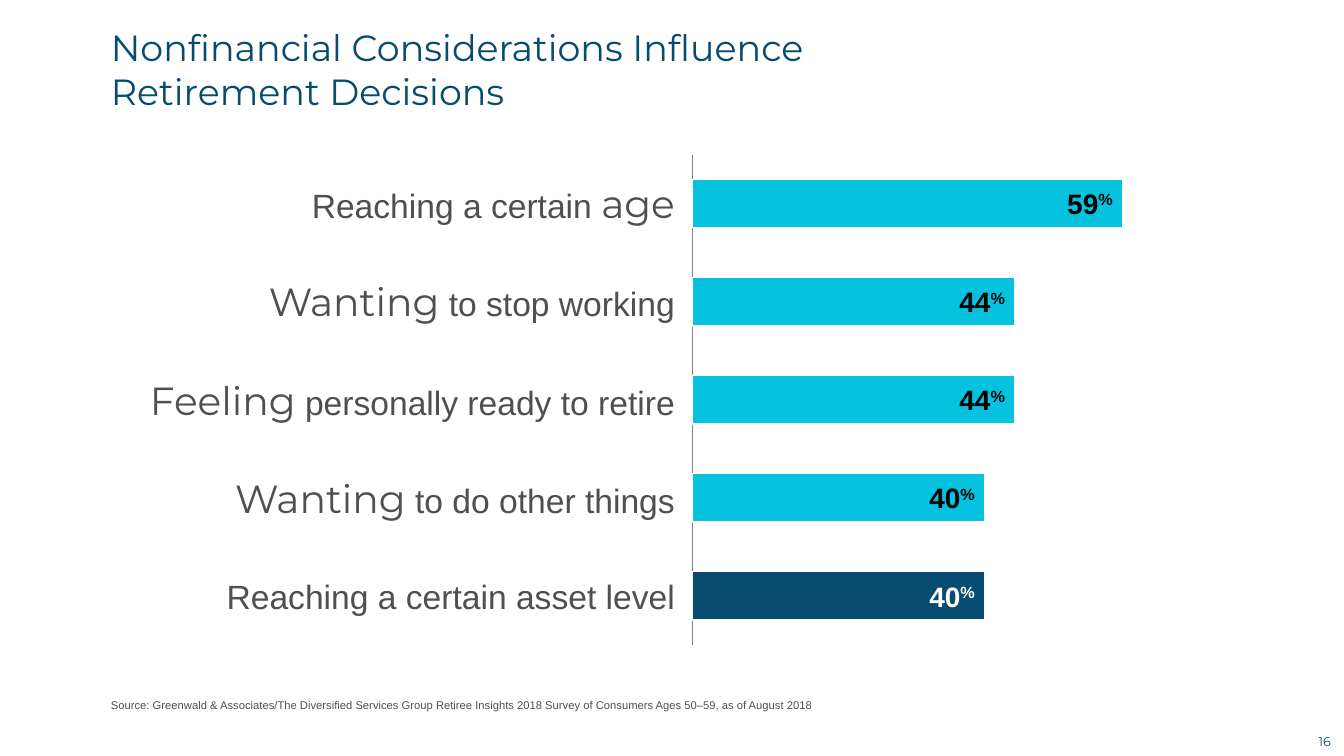
import pptx
import pptx.chart.data
import pptx.dml.color
import pptx.enum.chart
import pptx.enum.text
import pptx.oxml
import pptx.oxml.ns
import pptx.util

Pt = pptx.util.Pt
RGBColor = pptx.dml.color.RGBColor
ALIGN = pptx.enum.text.PP_ALIGN
ANCHOR = pptx.enum.text.MSO_ANCHOR

NAVY = RGBColor(0x05, 0x4C, 0x70)
CYAN = RGBColor(0x05, 0xC3, 0xDE)
GRAY = RGBColor(0x4F, 0x4F, 0x4F)
AXIS_GRAY = RGBColor(0x80, 0x80, 0x80)
BLACK = RGBColor(0, 0, 0)
WHITE = RGBColor(0xFF, 0xFF, 0xFF)

SANS, DISPLAY = "Arial", "Montserrat"
RUN_STYLES = {"plain": (SANS, 24), "accent": (DISPLAY, 28)}
PLOT_HEIGHT = 0.935
AXIS_MAXIMUM = 119

REASONS = [
    ([("Reaching a certain ", "plain"), ("age", "accent")], "59", 100, CYAN, BLACK),
    ([("Wanting", "accent"), (" to stop working", "plain")], "44", 75, CYAN, BLACK),
    ([("Feeling", "accent"), (" personally ready to retire", "plain")], "44", 75, CYAN, BLACK),
    ([("Wanting", "accent"), (" to do other things", "plain")], "40", 68, CYAN, BLACK),
    ([("Reaching a certain asset level", "plain")], "40", 68, NAVY, WHITE),
]


def style_font(font, name, size, color, bold=False):
    """Set the typeface, size, colour and weight of a font."""
    font.name, font.size, font.bold = name, Pt(size), bold
    font.color.rgb = color


def place(shape, box):
    """Move a shape to a box of left, top, width and height."""
    shape.left, shape.top, shape.width, shape.height = [Pt(length) for length in box]


def add_text_box(slide, box, align, right_inset=0):
    """Add a vertically centred text box and return its first paragraph."""
    frame = slide.shapes.add_textbox(*[Pt(length) for length in box]).text_frame
    frame.word_wrap = True
    frame.vertical_anchor = ANCHOR.MIDDLE
    frame.margin_left = frame.margin_top = frame.margin_bottom = 0
    frame.margin_right = Pt(right_inset)
    paragraph = frame.paragraphs[0]
    paragraph.alignment = align
    return paragraph


def fill_placeholder(placeholder, box, text, anchor):
    """Place a placeholder, write its text and return the paragraph."""
    place(placeholder, box)
    frame = placeholder.text_frame
    frame.text = text
    frame.auto_size = pptx.enum.text.MSO_AUTO_SIZE.NONE
    frame.word_wrap = True
    frame.vertical_anchor = anchor
    paragraph = frame.paragraphs[0]
    paragraph.alignment = ALIGN.LEFT
    paragraph.space_before = Pt(0)
    return paragraph


def add_title(slide, box):
    """Write the slide title."""
    text = "Nonfinancial Considerations Influence\vRetirement Decisions"
    paragraph = fill_placeholder(slide.shapes.title, box, text, ANCHOR.MIDDLE)
    style_font(paragraph.font, DISPLAY, 26, NAVY)


def add_source(slide, box):
    """Write the source note at the foot of the body placeholder."""
    text = ("Source: Greenwald & Associates/The Diversified Services Group Retiree Insights "
            "2018 Survey of Consumers Ages 50–59, as of August 2018")
    paragraph = fill_placeholder(slide.placeholders[1], box, text, ANCHOR.BOTTOM)
    properties = paragraph._p.get_or_add_pPr()
    properties.set("marL", str(Pt(27)))
    properties.set("indent", str(-Pt(27)))
    properties.append(pptx.oxml.parse_xml(
        f"<a:buNone {pptx.oxml.ns.nsdecls('a')}/>"))
    style_font(paragraph.font, SANS, 8, GRAY)


def set_plot_layout(chart):
    """Fix the inner plot area to the full width and upper part of the chart."""
    plot_area = chart._chartSpace.chart.plotArea
    for layout in plot_area.findall(pptx.oxml.ns.qn("c:layout")):
        plot_area.remove(layout)
    plot_area.insert(0, pptx.oxml.parse_xml(
        f"<c:layout {pptx.oxml.ns.nsdecls('c')}><c:manualLayout>"
        '<c:layoutTarget val="inner"/><c:xMode val="edge"/><c:yMode val="edge"/>'
        f'<c:x val="0"/><c:y val="0"/><c:w val="1"/><c:h val="{PLOT_HEIGHT}"/>'
        "</c:manualLayout></c:layout>"))


def add_bars(slide, box):
    """Add the bar chart of reasons."""
    data = pptx.chart.data.CategoryChartData()
    data.categories = [str(number) for number in range(1, len(REASONS) + 1)]
    data.add_series("Series 1", [reason[2] for reason in REASONS])
    chart = slide.shapes.add_chart(
        pptx.enum.chart.XL_CHART_TYPE.BAR_CLUSTERED,
        *[Pt(length) for length in box], data).chart
    chart.has_legend = chart.has_title = False
    style_font(chart.font, SANS, 10, GRAY)
    set_plot_layout(chart)

    category_axis, value_axis = chart.category_axis, chart.value_axis
    category_axis.reverse_order = True
    category_axis.tick_label_position = pptx.enum.chart.XL_TICK_LABEL_POSITION.NONE
    category_axis.major_tick_mark = pptx.enum.chart.XL_TICK_MARK.NONE
    category_axis.format.line.color.rgb = AXIS_GRAY
    category_axis.format.line.width = Pt(0.75)
    value_axis.minimum_scale, value_axis.maximum_scale = 0, AXIS_MAXIMUM
    value_axis.has_major_gridlines = False
    value_axis.visible = False

    plot = chart.plots[0]
    plot.gap_width = 102
    plot.vary_by_categories = False
    series = plot.series[0]
    bars = [(series.format, NAVY)]
    bars += [(series.points[index].format, reason[3]) for index, reason in enumerate(REASONS)]
    for bar, color in bars:
        bar.fill.solid()
        bar.fill.fore_color.rgb = color
        bar.line.color.rgb = WHITE
        bar.line.width = Pt(1)


def add_reason_label(slide, box, parts):
    """Write one reason to the left of its bar."""
    paragraph = add_text_box(slide, box, ALIGN.RIGHT)
    for text, style in parts:
        run = paragraph.add_run()
        run.text = text
        style_font(run.font, *RUN_STYLES[style], GRAY)


def add_percentage(slide, box, number, color):
    """Write one percentage with a raised sign inside the end of its bar."""
    paragraph = add_text_box(slide, box, ALIGN.RIGHT, right_inset=7.2)
    paragraph.add_run().text = number
    sign = paragraph.add_run()
    sign.text = "%"
    sign._r.get_or_add_rPr().set("baseline", "30000")
    style_font(paragraph.font, SANS, 20, color, bold=True)


def add_reasons(slide, box):
    """Add the chart in its box, with labels and percentages in line with the bars."""
    left, top, width, height = box
    add_bars(slide, box)
    pitch = height * PLOT_HEIGHT / len(REASONS)
    for index, (parts, number, value, _, text_color) in enumerate(REASONS):
        middle = top + (index + 0.5) * pitch
        bar_end = left + width * value / AXIS_MAXIMUM
        add_reason_label(slide, (left - 412, middle - 17, 400, 34), parts)
        add_percentage(slide, (bar_end - 104, middle - 12, 104, 24), number, text_color)


def add_page_number(slide, box):
    """Write the page number in the corner."""
    paragraph = add_text_box(slide, box, ALIGN.CENTER)
    paragraph.add_run().text = "16"
    style_font(paragraph.font, DISPLAY, 9, NAVY)


def main():
    """Build and save the presentation."""
    presentation = pptx.Presentation()
    presentation.slide_width, presentation.slide_height = Pt(960), Pt(540)
    slide = presentation.slides.add_slide(presentation.slide_layouts[1])
    add_title(slide, (72, 20, 828, 58.5))
    add_source(slide, (72, 400.5, 806, 111.5))
    add_reasons(slide, (494, 110, 366.5, 375))
    add_page_number(slide, (934, 520.5, 24.5, 18))
    presentation.save("out.pptx")


if __name__ == "__main__":
    main()
